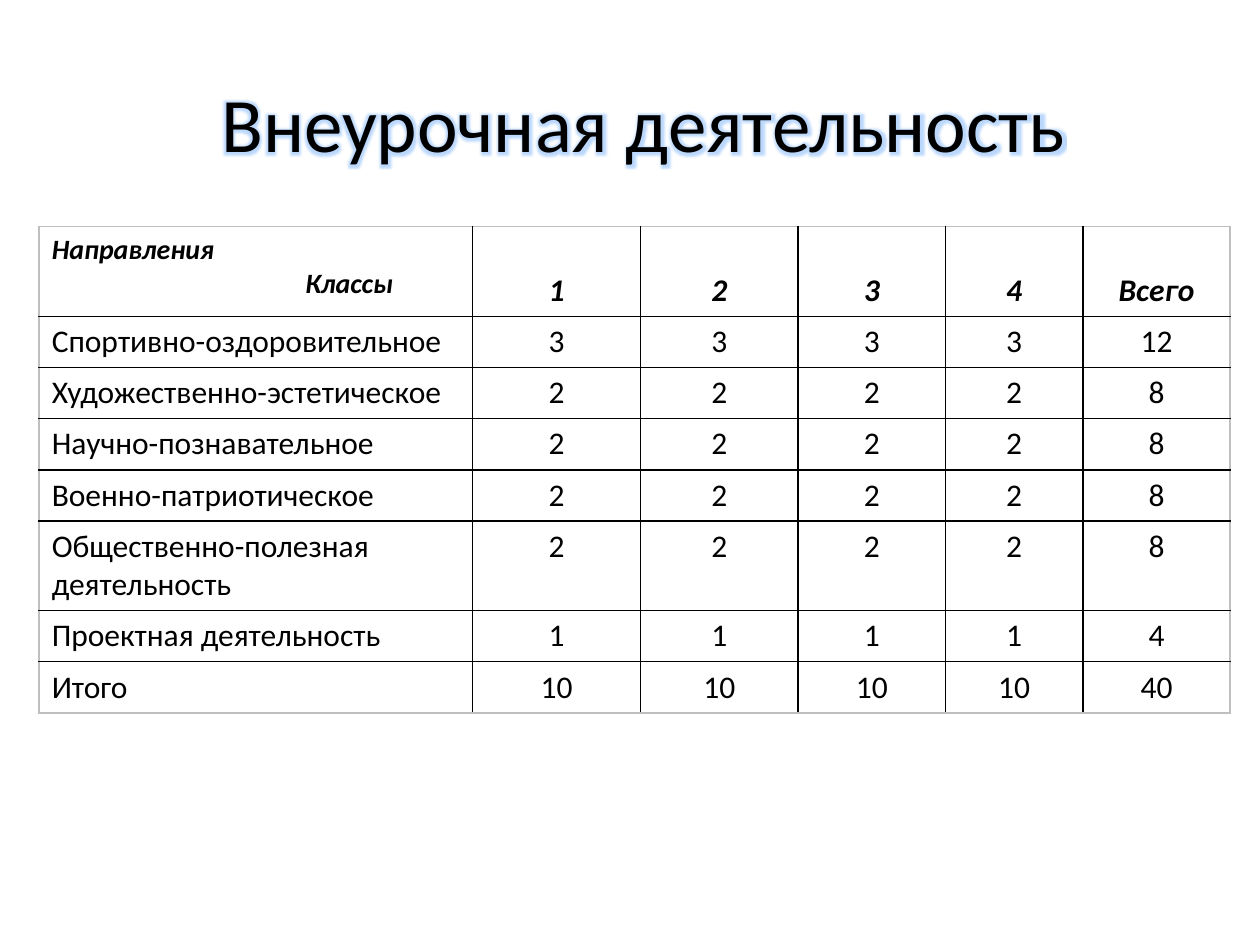
import pptx
import pptx.dml.color
import pptx.enum.text
import pptx.oxml
import pptx.oxml.ns
import pptx.util
from dataclasses import dataclass

Cm = pptx.util.Cm
Pt = pptx.util.Pt
Align = pptx.enum.text.PP_ALIGN
Anchor = pptx.enum.text.MSO_ANCHOR


@dataclass(frozen=True)
class Theme:
    font: str = "Calibri"
    text: str = "000000"
    grid: str = "000000"
    frame: str = "BFBFBF"
    glow: str = "8EBEFA"
    title_size: int = 44
    body_size: int = 18
    corner_size: int = 16


THEME = Theme()
COLUMN_WIDTHS = [8.74, 3.38, 3.18, 2.97, 2.77, 2.97]
ROW_HEIGHT = 1.03
TALL_ROW_HEIGHT = 1.81
TALL_ROWS = (0, 5)
CORNER = "Направления\nКлассы"
ROWS = [
    [CORNER, "1", "2", "3", "4", "Всего"],
    ["Спортивно-оздоровительное", 3, 3, 3, 3, 12],
    ["Художественно-эстетическое", 2, 2, 2, 2, 8],
    ["Научно-познавательное", 2, 2, 2, 2, 8],
    ["Военно-патриотическое", 2, 2, 2, 2, 8],
    ["Общественно-полезная деятельность", 2, 2, 2, 2, 8],
    ["Проектная деятельность", 1, 1, 1, 1, 4],
    ["Итого", 10, 10, 10, 10, 40],
]


def drawing_xml(tag, attributes, content):
    ns = pptx.oxml.ns.nsdecls("a")
    return pptx.oxml.parse_xml(f"<a:{tag} {ns} {attributes}>{content}</a:{tag}>")


def format_text(tf, size, align, emphasis=False):
    for p in tf.paragraphs:
        p.alignment = align
        for r in p.runs:
            r.font.name = THEME.font
            r.font.size = Pt(size)
            r.font.bold = r.font.italic = emphasis
            r.font.color.rgb = pptx.dml.color.RGBColor.from_string(THEME.text)


def add_glow(r):
    glow = f'<a:glow rad="{Pt(5)}"><a:srgbClr val="{THEME.glow}"><a:alpha val="60000"/></a:srgbClr></a:glow>'
    fill = r.font._element.find(pptx.oxml.ns.qn("a:solidFill"))
    fill.addnext(drawing_xml("effectLst", "", glow))


def add_title(slide, text):
    sp = slide.shapes.title
    sp.left, sp.top, sp.width, sp.height = Cm(2.18), Cm(0.41), Cm(21.59), Cm(4.09)
    tf = sp.text_frame
    tf.text = text
    tf.vertical_anchor = Anchor.MIDDLE
    format_text(tf, THEME.title_size, Align.CENTER)
    add_glow(tf.paragraphs[0].runs[0])


def set_borders(cell, outer_sides):
    tcPr = cell._tc.get_or_add_tcPr()
    for i, side in enumerate("LRTB"):
        color = THEME.frame if side in outer_sides else THEME.grid
        fill = f'<a:solidFill><a:srgbClr val="{color}"/></a:solidFill>'
        tcPr.insert(i, drawing_xml(f"ln{side}", f'w="{Pt(1)}"', fill))


def outer_sides(row, col):
    edges = {"L": col == 0, "R": col == len(COLUMN_WIDTHS) - 1,
             "T": row == 0, "B": row == len(ROWS) - 1}
    return [side for side, is_outer in edges.items() if is_outer]


def fill_cell(cell, row, col, value):
    tf = cell.text_frame
    tf.text = str(value)
    is_header = row == 0
    is_corner = is_header and col == 0
    size = THEME.corner_size if is_corner else THEME.body_size
    format_text(tf, size, Align.CENTER if col else Align.LEFT, is_header)
    cell.vertical_anchor = Anchor.BOTTOM if is_header and col else Anchor.TOP
    if is_corner:
        tf.paragraphs[1]._p.get_or_add_pPr().set("marL", str(Cm(5.11)))
    cell.fill.background()
    set_borders(cell, outer_sides(row, col))


def add_activity_table(slide):
    heights = [TALL_ROW_HEIGHT if i in TALL_ROWS else ROW_HEIGHT for i in range(len(ROWS))]
    frame = slide.shapes.add_table(len(ROWS), len(COLUMN_WIDTHS), Cm(0.79), Cm(4.57),
                                   Cm(sum(COLUMN_WIDTHS)), Cm(sum(heights)))
    table = frame.table
    table.first_row = table.horz_banding = False
    for column, width in zip(table.columns, COLUMN_WIDTHS):
        column.width = Cm(width)
    for row, height in zip(table.rows, heights):
        row.height = Cm(height)
    for i, values in enumerate(ROWS):
        for j, value in enumerate(values):
            fill_cell(table.cell(i, j), i, j, value)


def main():
    prs = pptx.Presentation()
    prs.slide_width, prs.slide_height = Cm(25.4), Cm(19.05)
    slide = prs.slides.add_slide(prs.slide_layouts[0])
    subtitle = slide.placeholders[1]._element
    subtitle.getparent().remove(subtitle)
    add_title(slide, "Внеурочная деятельность")
    add_activity_table(slide)
    prs.save("out.pptx")


if __name__ == "__main__":
    main()
